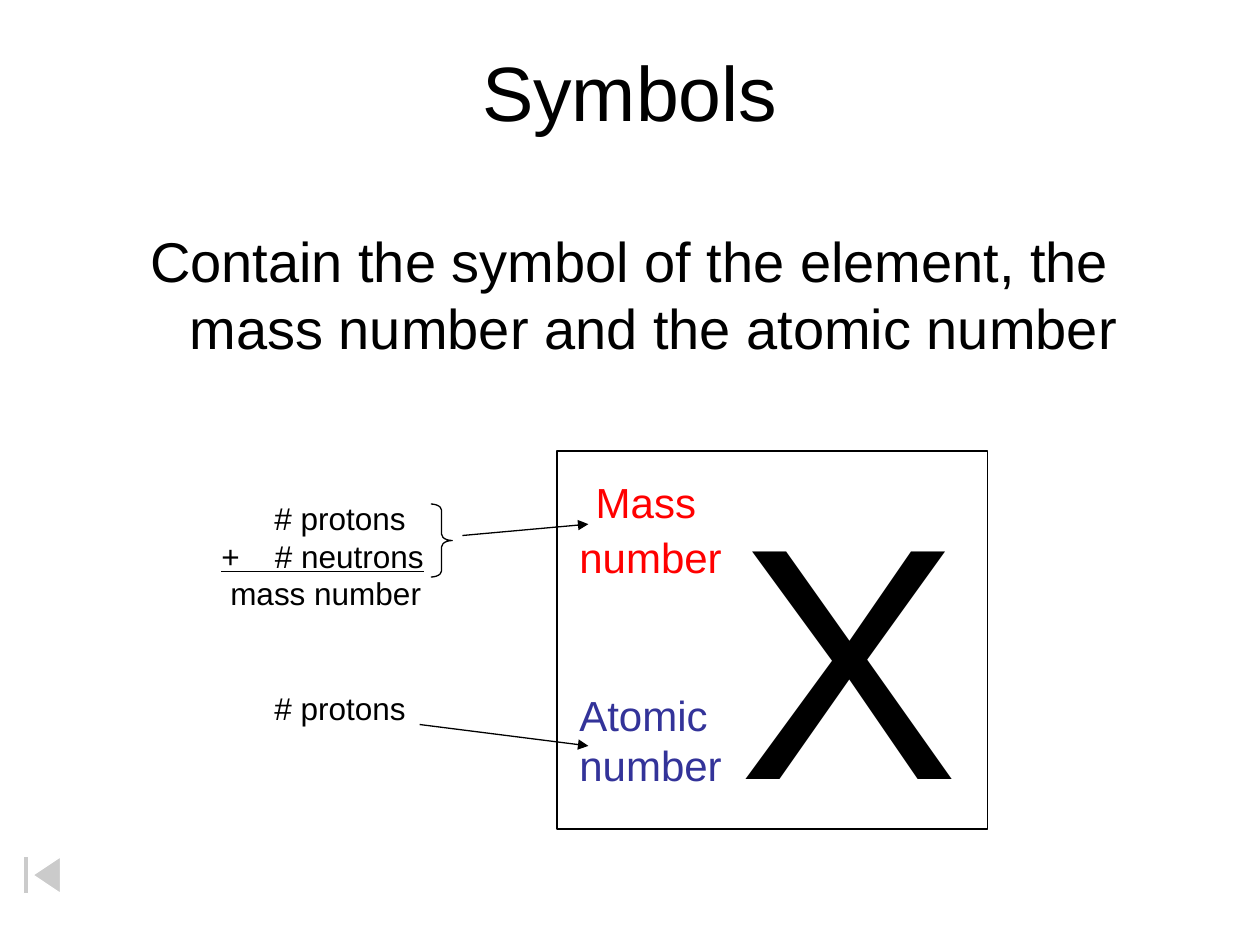
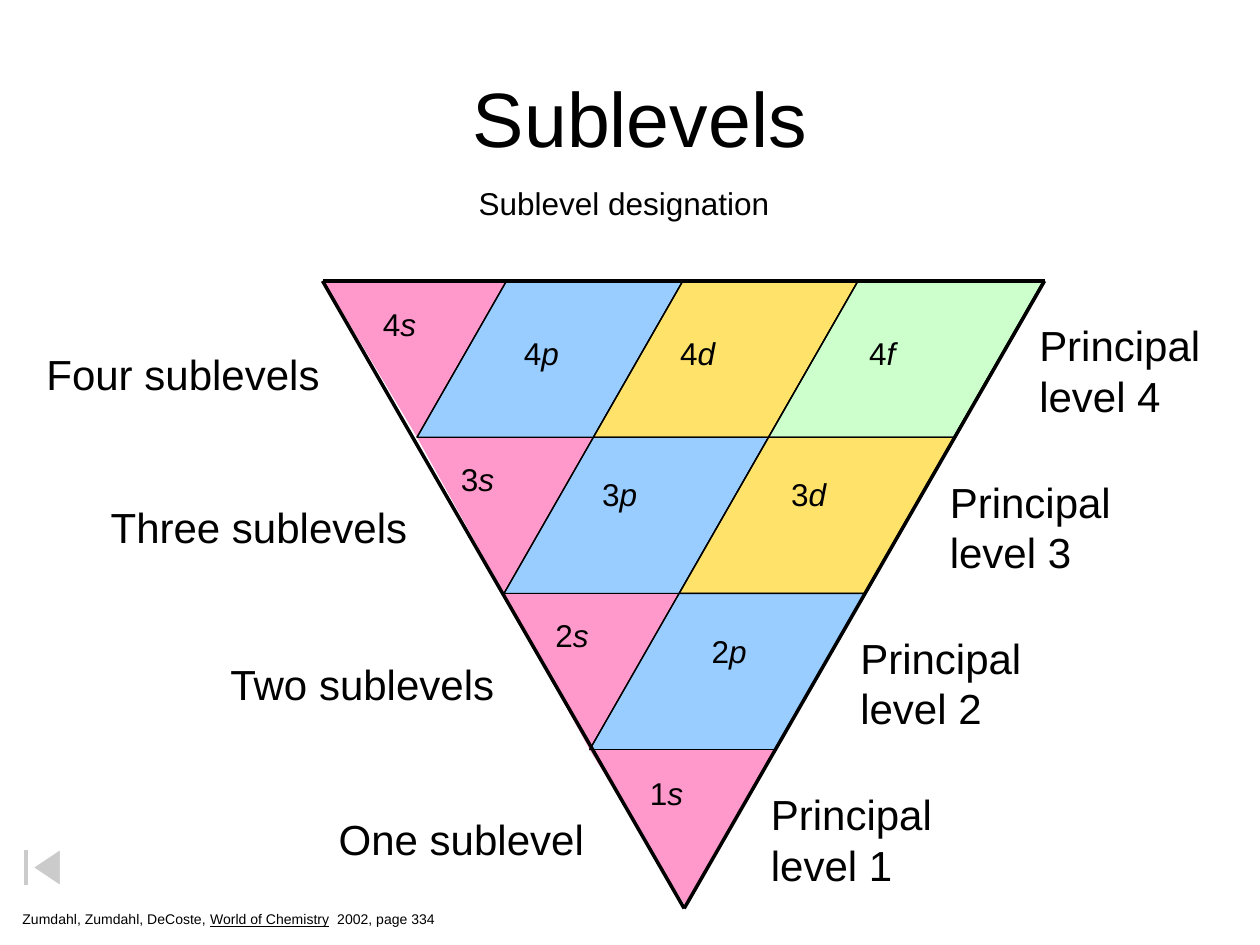
import pptx
import pptx.dml.color
import pptx.enum.shapes
import pptx.enum.text
import pptx.oxml.ns
import pptx.util

Inches = pptx.util.Inches
Pt = pptx.util.Pt
RGBColor = pptx.dml.color.RGBColor
MSO_SHAPE = pptx.enum.shapes.MSO_SHAPE
MSO_ANCHOR = pptx.enum.text.MSO_ANCHOR
PP_ALIGN = pptx.enum.text.PP_ALIGN
qn = pptx.oxml.ns.qn

FONT = "Arial"
BLACK = RGBColor(0x00, 0x00, 0x00)
WHITE = RGBColor(0xFF, 0xFF, 0xFF)
RED = RGBColor(0xFF, 0x00, 0x00)
INDIGO = RGBColor(0x33, 0x33, 0x99)
PINK = RGBColor(0xFF, 0x99, 0xCC)
BLUE = RGBColor(0x99, 0xCC, 0xFF)
YELLOW = RGBColor(0xFF, 0xE2, 0x69)
GREEN = RGBColor(0xCC, 0xFF, 0xCC)
THIN, THICK = 0.75, 2

# Sublevel triangle: borders along the top edge, moving left row by row
TOP_BORDERS = [2.57, 4.02, 5.42, 6.81, 8.28]
TRIANGLE_TOP = 2.23
ROW_HEIGHT = 1.24
ROW_LEAN = 0.71
SUBLEVEL_FILLS = {"s": PINK, "p": BLUE, "d": YELLOW, "f": GREEN}

# One row per principal level: name, its place, then the place of each sublevel
LEVELS = [
    (4, "Four sublevels", (0.27, 2.72, 2.37),
     [("s", 2.94, 2.37), ("p", 4.06, 2.6), ("d", 5.3, 2.6), ("f", 6.8, 2.6)]),
    (3, "Three sublevels", (0.78, 3.93, 2.56),
     [("s", 3.56, 3.6), ("p", 4.68, 3.72), ("d", 6.18, 3.72)]),
    (2, "Two sublevels", (1.73, 5.18, 2.32),
     [("s", 4.31, 4.84), ("p", 5.55, 4.97)]),
    (1, "One sublevel", (2.59, 6.41, 2.15), [("s", 5.06, 6.09)]),
]


# Text
def add_run(paragraph, text, size, color=BLACK, italic=False, underline=False):
    run = paragraph.add_run()
    run.text = text
    font = run.font
    font.name, font.size = FONT, Pt(size)
    font.color.rgb = color
    font.italic, font.underline = italic, underline


def set_indent(paragraph, left, first=0):
    properties = paragraph._p.get_or_add_pPr()
    properties.set("marL", str(Inches(left)))
    properties.set("indent", str(Inches(first)))


def add_text(slide, place, lines, size, color=BLACK):
    """Each line is a list of (text, run options); return the text frame."""
    frame = slide.shapes.add_textbox(*map(Inches, place)).text_frame
    frame.word_wrap = True
    for number, line in enumerate(lines):
        paragraph = frame.add_paragraph() if number else frame.paragraphs[0]
        for text, options in line:
            add_run(paragraph, text, size, color, **options)
    return frame


def plain(*texts):
    return [[(text, {})] for text in texts]


def add_titled_slide(presentation, title, place, anchor):
    slide = presentation.slides.add_slide(presentation.slide_layouts[5])
    shape = slide.shapes.title
    shape.left, shape.top, shape.width, shape.height = map(Inches, place)
    frame = shape.text_frame
    frame.auto_size = pptx.enum.text.MSO_AUTO_SIZE.NONE
    frame.vertical_anchor = anchor
    frame.paragraphs[0].alignment = PP_ALIGN.CENTER
    add_run(frame.paragraphs[0], title, 44)
    return slide


# Shapes
def style_shape(shape, fill=None, line=BLACK):
    shape.shadow.inherit = False
    if fill is None:
        shape.fill.background()
    else:
        shape.fill.solid()
        shape.fill.fore_color.rgb = fill
    if line is None:
        shape.line.fill.background()
    else:
        shape.line.color.rgb = line
        shape.line.width = Pt(THIN)


def add_shape(slide, kind, place, fill=None, line=BLACK):
    shape = slide.shapes.add_shape(kind, *map(Inches, place))
    style_shape(shape, fill, line)
    return shape


def add_polygon(slide, points, fill, line):
    corners = [(Inches(x), Inches(y)) for x, y in points]
    builder = slide.shapes.build_freeform(*corners[0])
    builder.add_line_segments(corners[1:], close=True)
    style_shape(builder.convert_to_shape(), fill, line)


def add_line(slide, start, end, width=THIN, arrow=False):
    connector = slide.shapes.add_connector(
        pptx.enum.shapes.MSO_CONNECTOR.STRAIGHT, *map(Inches, start + end))
    connector.line.color.rgb = BLACK
    connector.line.width = Pt(width)
    properties = connector.element.spPr
    if arrow:
        line = properties.find(qn("a:ln"))
        line.append(line.makeelement(qn("a:tailEnd"), {"type": "triangle"}))
    properties.append(properties.makeelement(qn("a:effectLst"), {}))


def add_back_button(slide, top):
    button = add_shape(slide, MSO_SHAPE.ACTION_BUTTON_BEGINNING,
                       (0, top, 0.67, 0.39), WHITE, WHITE)
    fill = button.element.spPr.find(qn("a:solidFill"))[0]
    fill.append(fill.makeelement(qn("a:alpha"), {"val": "50000"}))


# Slide 1
def build_symbols(presentation):
    slide = add_titled_slide(presentation, "Symbols", (0.5, 0.3, 9, 0.83), MSO_ANCHOR.TOP)
    body = add_text(slide, (0.5, 1.75, 9, 4.95), plain(
        "Contain the symbol of the element, the mass number and the atomic number"), 32)
    body.paragraphs[0].alignment = PP_ALIGN.CENTER
    set_indent(body.paragraphs[0], 0.38, -0.38)

    # Element box
    add_text(slide, (5.76, 3.51, 1.95, 3.25), plain("X"), 189)
    mass = add_text(slide, (4.5, 3.58, 1.33, 1.1), plain("Mass", "number"), 24, RED)
    mass.margin_top = Inches(0.2)
    set_indent(mass.paragraphs[0], 0.13)
    mass.paragraphs[1].space_before = Pt(3)
    add_text(slide, (4.5, 5.42, 1.33, 0.9), plain("Atomic", "number"), 24, INDIGO)
    add_shape(slide, MSO_SHAPE.RECTANGLE, (4.42, 3.58, 3.42, 3))

    # Atomic number
    add_line(slide, (3.33, 5.75), (4.67, 5.92), arrow=True)
    add_text(slide, (2.08, 5.42, 1.26, 0.4), plain("# protons"), 18)

    # Mass number sum; the underline runs on through the gap after the plus
    add_line(slide, (3.67, 4.25), (4.67, 4.16), arrow=True)
    mass_sum = add_text(slide, (1.66, 3.91, 1.9, 1), [
        [("# protons", {})],
        [("+    # neutrons", {"underline": True})],
        [("mass number", {})]], 18)
    set_indent(mass_sum.paragraphs[0], 0.42)
    set_indent(mass_sum.paragraphs[2], 0.07)
    brace = add_shape(slide, MSO_SHAPE.RIGHT_BRACE, (3.42, 4, 0.17, 0.58))
    brace.adjustments[0] = 0.29
    add_back_button(slide, 6.75)


# Slide 2
def grid_point(border, row):
    return (TOP_BORDERS[border] - ROW_LEAN * row, TRIANGLE_TOP + ROW_HEIGHT * row)


def add_sublevel(slide, row, column, fill):
    left = row + column
    points = [grid_point(left, row), grid_point(left + 1, row),
              grid_point(left + 1, row + 1)]
    if column:
        points.append(grid_point(left, row + 1))
    add_polygon(slide, points, fill, BLACK if column else None)


def add_triangle_lines(slide):
    for step in range(1, len(LEVELS)):
        add_line(slide, grid_point(step, step), grid_point(4, step))
        add_line(slide, grid_point(step, 0), grid_point(step, step))
    corners = [(2.56, 2.23), (8.29, 2.23), (5.43, 7.21)]
    for start, end in zip(corners, corners[1:] + corners[:1]):
        add_line(slide, start, end, THICK)


def build_sublevels(presentation):
    slide = add_titled_slide(presentation, "Sublevels", (0.58, 0.3, 9, 1.25),
                             MSO_ANCHOR.MIDDLE)
    add_text(slide, (0.08, 7.18, 3.6, 0.23), [[
        ("Zumdahl, Zumdahl, DeCoste, ", {}),
        ("World of Chemistry", {"underline": True}),
        ("  2002, page 334", {})]], 8)
    add_back_button(slide, 6.69)
    add_text(slide, (3.7, 1.41, 2.55, 0.4), plain("Sublevel designation"), 18)

    # Cells, then lines, then labels on top
    for row, (_, _, _, sublevels) in enumerate(LEVELS):
        for column, (letter, _, _) in enumerate(sublevels):
            add_sublevel(slide, row, column, SUBLEVEL_FILLS[letter])
    add_triangle_lines(slide)
    for row, (level, name, (left, top, width), sublevels) in enumerate(LEVELS):
        for letter, x, y in sublevels:
            add_text(slide, (x, y, 0.5, 0.4),
                     [[(str(level), {}), (letter, {"italic": True})]], 18)
        add_text(slide, (left, top, width + 0.05, 0.5), plain(name), 24)
        add_text(slide, (8.15 - ROW_LEAN * row, 2.49 + ROW_HEIGHT * row, 1.5, 0.9),
                 plain("Principal", f"level {level}"), 24)


def main():
    presentation = pptx.Presentation()
    presentation.slide_width = Inches(10)
    presentation.slide_height = Inches(7.5)
    build_symbols(presentation)
    build_sublevels(presentation)
    presentation.save("out.pptx")


if __name__ == "__main__":
    main()
